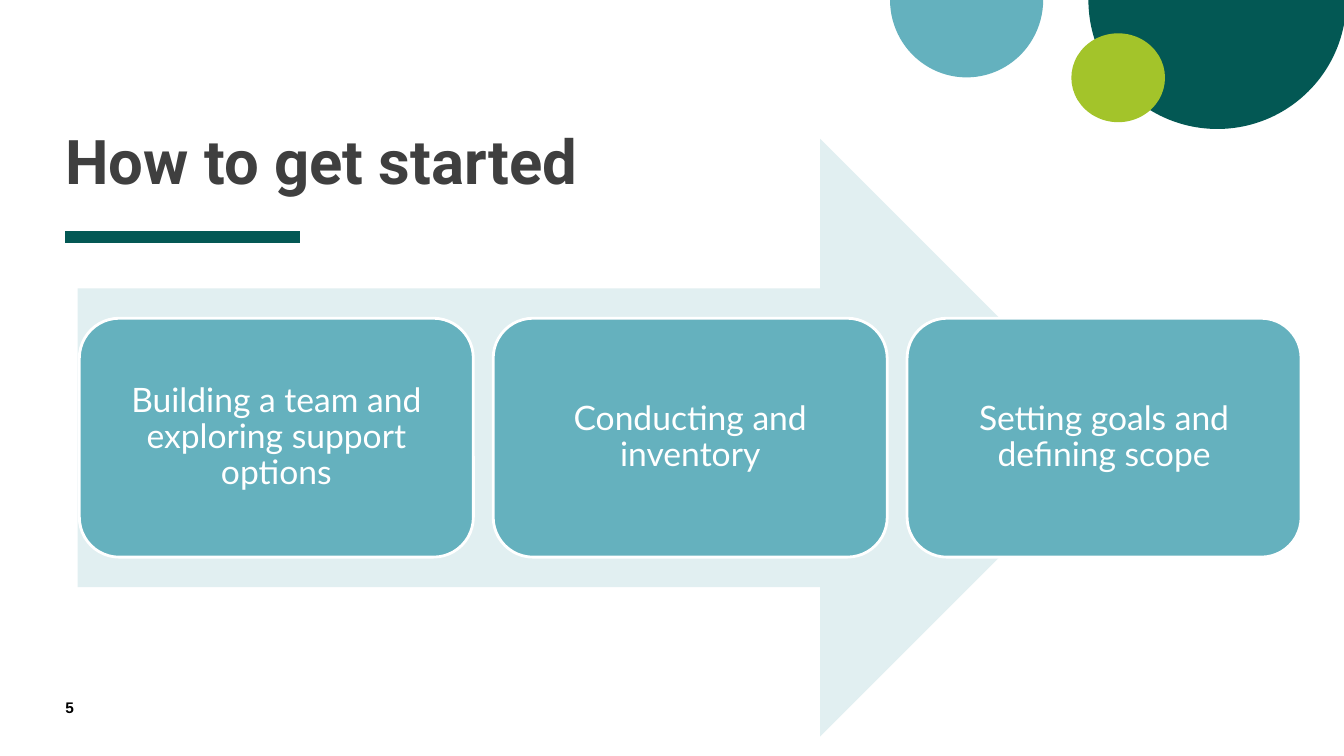
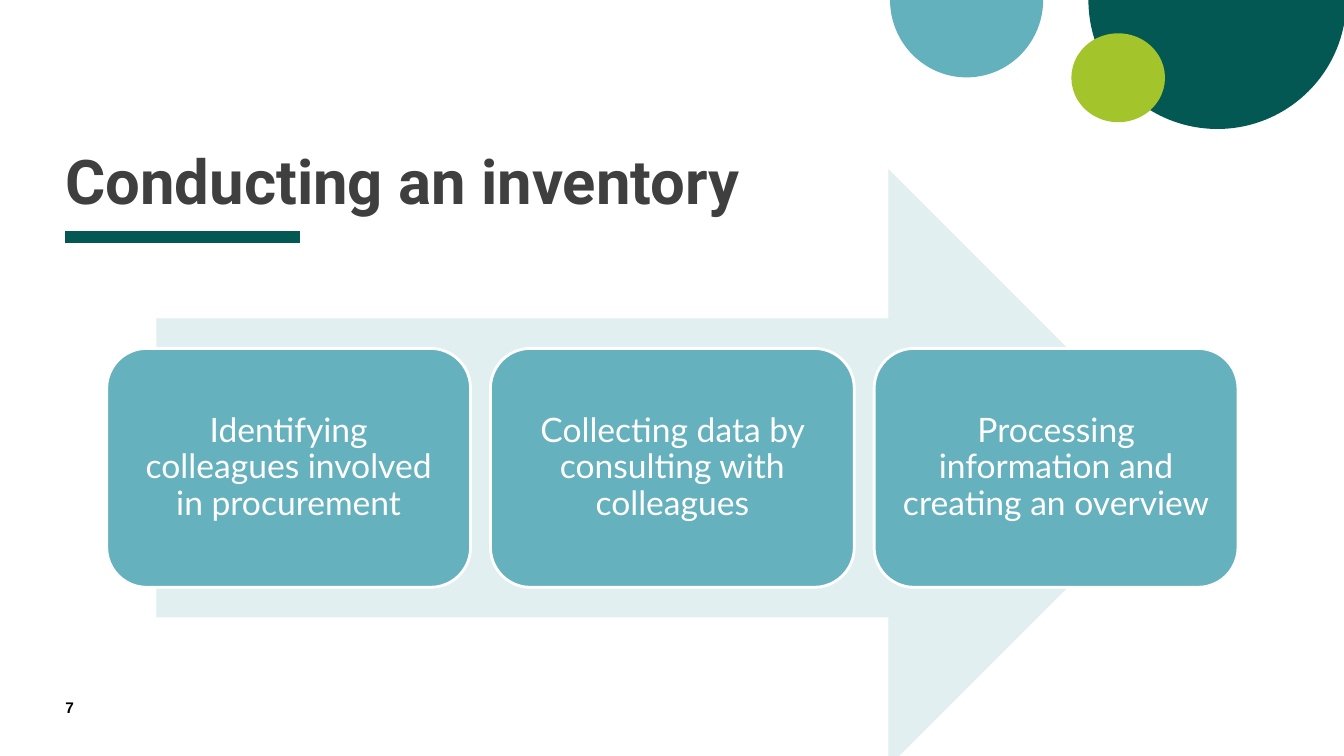
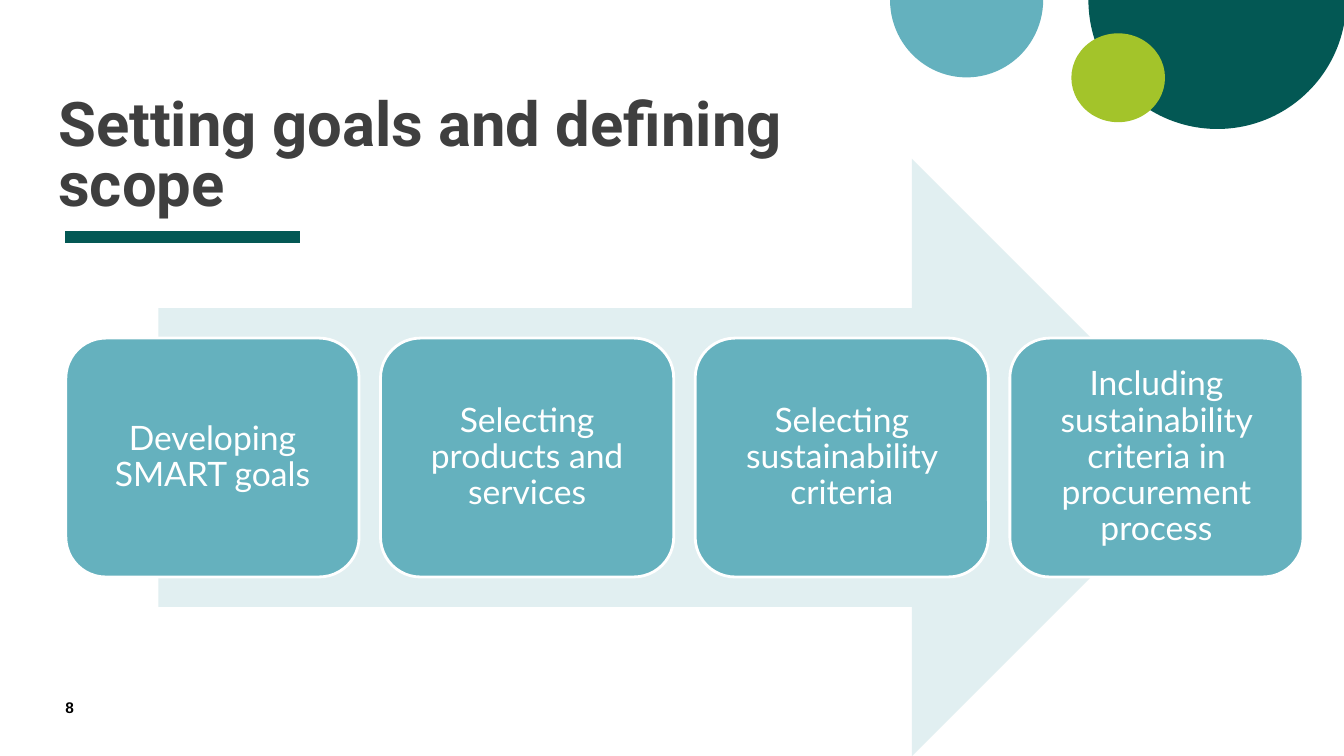
from pptx import Presentation
from pptx.dml.color import RGBColor
from pptx.enum.shapes import MSO_CONNECTOR, MSO_SHAPE
from pptx.enum.text import MSO_ANCHOR, PP_ALIGN
from pptx.oxml.ns import qn
from pptx.util import Cm, Pt
from lxml.etree import SubElement

WHITE = RGBColor(0xFF, 0xFF, 0xFF)
BLACK = RGBColor(0x00, 0x00, 0x00)
GREY = RGBColor(0x3F, 0x3F, 0x3F)
GREEN = RGBColor(0x03, 0x58, 0x54)
TEAL = RGBColor(0x64, 0xB1, 0xBE)
LIME = RGBColor(0xA3, 0xC4, 0x2A)
PALE = RGBColor(0xE1, 0xEF, 0xF1)
BLUE = RGBColor(0x65, 0xB1, 0xBE)

MARGIN = 1.65
ARROW_HIGH = 15.06
STEP_HIGH = 6.02


class Deck:
    def __init__(self):
        self.prs = Presentation()
        self.prs.slide_width = Cm(33.87)
        self.prs.slide_height = Cm(19.05)
        self.slide = None

    def start(self, title, left, top, number):
        self.slide = self.prs.slides.add_slide(self.prs.slide_layouts[6])
        self.half(27.43, -3.25, 6.5, 6.5, GREEN)
        self.rule(MARGIN, 5.97, 5.92)
        self.half(22.43, -1.96, 3.86, 3.91, TEAL)
        self.shape(MSO_SHAPE.OVAL, 27, 0.84, 2.36, 2.24, LIME)
        frame = self.box(left, top, 18.85, 4.42, MSO_ANCHOR.BOTTOM)
        self.label(frame, title, "Roboto", 44, GREY, bold=True, spacing=0.8)
        frame = self.box(MARGIN, 17.58, 1.45, 0.69, MSO_ANCHOR.TOP)
        self.label(frame, str(number), "Arial", 11, BLACK, bold=True)

    def shape(self, kind, left, top, width, height, fill):
        shape = self.slide.shapes.add_shape(
            kind, Cm(left), Cm(top), Cm(width), Cm(height))
        shape.shadow.inherit = False
        shape.fill.solid()
        shape.fill.fore_color.rgb = fill
        shape.line.fill.background()
        return shape

    def half(self, left, top, width, height, fill):
        pie = self.shape(MSO_SHAPE.PIE, left, top, width, height, fill)
        pie.adjustments[0] = 0
        pie.adjustments[1] = 108

    def rule(self, left, top, width):
        line = self.slide.shapes.add_connector(
            MSO_CONNECTOR.STRAIGHT, Cm(left), Cm(top), Cm(left + width), Cm(top))
        line.line.color.rgb = GREEN
        line.line.width = Pt(8)
        SubElement(line.element.spPr, qn("a:effectLst"))

    def box(self, left, top, width, height, anchor):
        box = self.slide.shapes.add_textbox(
            Cm(left), Cm(top), Cm(width), Cm(height))
        return self.setup(box.text_frame, anchor, 0)

    def setup(self, frame, anchor, inset):
        frame.word_wrap = True
        frame.vertical_anchor = anchor
        frame.margin_left = frame.margin_right = Cm(inset)
        frame.margin_top = frame.margin_bottom = Cm(inset)
        return frame

    def label(self, frame, text, font, size, color, bold=False,
              spacing=1.0, align=PP_ALIGN.LEFT):
        para = frame.paragraphs[0]
        para.alignment = align
        para.line_spacing = spacing
        run = para.add_run()
        run.text = text
        run.font.name = font
        run.font.size = Pt(size)
        run.font.bold = bold
        run.font.color.rgb = color

    def step(self, text, left, top, width):
        card = self.shape(MSO_SHAPE.ROUNDED_RECTANGLE,
                          left, top, width, STEP_HIGH, BLUE)
        card.adjustments[0] = 0.167
        card.line.color.rgb = WHITE
        card.line.width = Pt(2)
        frame = self.setup(card.text_frame, MSO_ANCHOR.MIDDLE, 0.038 * width)
        self.label(frame, text, "Lato", 24, WHITE,
                   spacing=0.9, align=PP_ALIGN.CENTER)

    def flow(self, arrow, left, width, gap, steps):
        start, top, length = arrow
        self.shape(MSO_SHAPE.RIGHT_ARROW, start, top, length, ARROW_HIGH, PALE)
        middle = top + (ARROW_HIGH - STEP_HIGH) / 2
        for index, text in enumerate(steps):
            self.step(text, left + index * (width + gap), middle, width)


def main():
    deck = Deck()

    deck.start("How to get started", MARGIN, 0.53, 5)
    deck.flow((1.96, 3.5, 26.24), 2, 9.93, 0.5, [
        "Building a team and exploring support options",
        "Conducting and inventory",
        "Setting goals and defining scope",
    ])

    deck.start("Conducting an inventory", MARGIN, 1.04, 7)
    deck.flow((3.94, 4.26, 25.98), 2.69, 9.17, 0.5, [
        "Identifying colleagues involved in procurement",
        "Collecting data by consulting with colleagues",
        "Processing information and creating an overview",
    ])

    deck.start("Setting goals and defining scope", 1.47, 1.07, 8)
    deck.flow((3.99, 4, 26.52), 1.66, 7.39, 0.54, [
        "Developing SMART goals",
        "Selecting products and services",
        "Selecting sustainability criteria",
        "Including sustainability criteria in procurement process",
    ])

    deck.prs.save("out.pptx")


if __name__ == "__main__":
    main()
